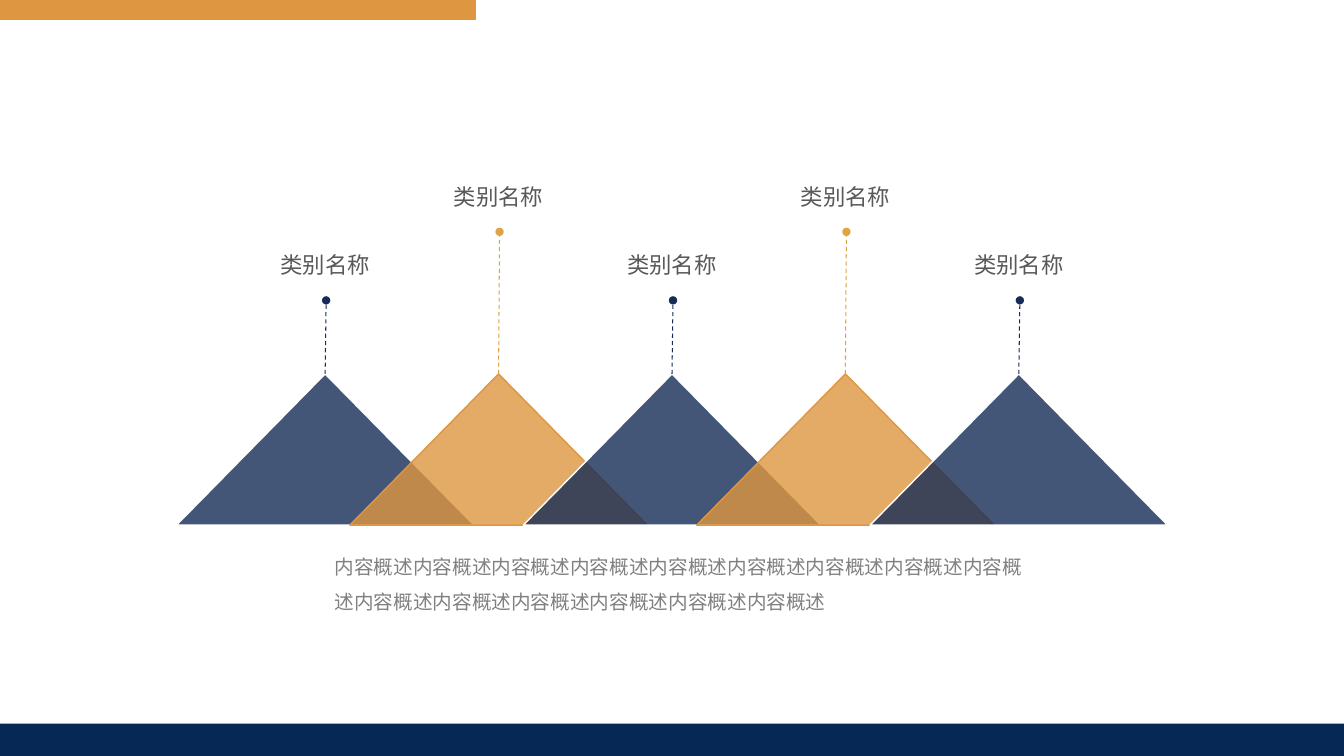
import pptx
import pptx.util
import pptx.dml.color
import pptx.enum.dml
import pptx.enum.shapes
import pptx.enum.text
import pptx.oxml.ns
from lxml import etree

Inches = pptx.util.Inches
Pt = pptx.util.Pt
RGBColor = pptx.dml.color.RGBColor
SHAPES = pptx.enum.shapes.MSO_SHAPE
ALIGN = pptx.enum.text.PP_ALIGN
qn = pptx.oxml.ns.qn

NAVY = RGBColor(0x16, 0x2C, 0x56)
FOOTER_NAVY = RGBColor(0x06, 0x28, 0x55)
ORANGE = RGBColor(0xDE, 0x96, 0x40)
STEM_ORANGE = RGBColor(0xE0, 0xA2, 0x42)
NEAR_WHITE = RGBColor(0xFE, 0xFF, 0xFF)
LABEL_GREY = RGBColor(0x59, 0x59, 0x59)
BODY_GREY = RGBColor(0x80, 0x80, 0x80)
FONT = "Noto Sans CJK SC"

SLIDE_W, SLIDE_H = 13.33, 7.5
PEAK_W, PEAK_H, PEAK_STEP = 2.95, 1.5, 1.72
LABEL_W, LABEL_H = 2.48, 0.56


def add_filled(slide, kind, box, fill, outline=None, opacity=None):
    shape = slide.shapes.add_shape(kind, *map(Inches, box))
    shape.shadow.inherit = False
    shape.fill.solid()
    shape.fill.fore_color.rgb = fill
    if opacity is not None:
        color = shape.fill._xPr.find(".//" + qn("a:srgbClr"))
        etree.SubElement(color, qn("a:alpha"), val=str(opacity * 1000))
    if outline is None:
        shape.line.fill.background()
    else:
        shape.line.color.rgb = outline
        shape.line.width = Pt(1)
    return shape


def add_text(slide, box, text, size, color, align=ALIGN.LEFT, margins=(0.1, 0.05), grow=False):
    frame = slide.shapes.add_textbox(*map(Inches, box)).text_frame
    frame.word_wrap = True
    frame.margin_left = frame.margin_right = Inches(margins[0])
    frame.margin_top = frame.margin_bottom = Inches(margins[1])
    if grow:
        frame.auto_size = pptx.enum.text.MSO_AUTO_SIZE.SHAPE_TO_FIT_TEXT
    paragraph = frame.paragraphs[0]
    paragraph.alignment = align
    paragraph.line_spacing = 1.5
    run = paragraph.add_run()
    run.text = text
    run.font.size = Pt(size)
    run.font.name = FONT
    run.font.color.rgb = color
    etree.SubElement(run.font._element, qn("a:ea"), typeface=FONT)


def add_stem(slide, start, end, color):
    """Dashed line that ends in a dot."""
    stem = slide.shapes.add_connector(
        pptx.enum.shapes.MSO_CONNECTOR.STRAIGHT, *map(Inches, start + end))
    stem.line.color.rgb = color
    stem.line.width = Pt(0.75)
    stem.line.dash_style = pptx.enum.dml.MSO_LINE.DASH
    etree.SubElement(stem.line._get_or_add_ln(), qn("a:tailEnd"), type="oval")
    etree.SubElement(stem._element.spPr, qn("a:effectLst"))


def add_peak(slide, left, top, label, tall):
    """One triangle with its stem and label, placed from the triangle's corner."""
    fill, outline, stem_color = (
        (ORANGE, ORANGE, STEM_ORANGE) if tall else (NAVY, NEAR_WHITE, NAVY))
    stem_h, label_rise = (1.41, 2.09) if tall else (0.73, 1.41)
    apex = left + PEAK_W / 2
    add_filled(slide, SHAPES.ISOSCELES_TRIANGLE, (left, top, PEAK_W, PEAK_H),
               fill, outline, opacity=80)
    add_stem(slide, (apex, top), (apex + 0.01, top - stem_h), stem_color)
    add_text(slide, (apex - LABEL_W / 2, top - label_rise, LABEL_W, LABEL_H), label,
             16, LABEL_GREY, align=ALIGN.CENTER, margins=(0.12, 0.06))


def add_peak_row(slide, left, top, labels):
    for index, label in enumerate(labels):
        add_peak(slide, left + index * PEAK_STEP, top, label, tall=index % 2 == 1)


def add_bars(slide, width, height):
    add_filled(slide, SHAPES.RECTANGLE, (0, 0, width * 0.354, 0.19), ORANGE, ORANGE)
    add_filled(slide, SHAPES.RECTANGLE, (0, height - 0.32, width, 0.32), FOOTER_NAVY)


def main():
    deck = pptx.Presentation()
    deck.slide_width, deck.slide_height = Inches(SLIDE_W), Inches(SLIDE_H)
    slide = deck.slides.add_slide(deck.slide_layouts[6])

    # Row of overlapping peaks
    add_peak_row(slide, 1.75, 3.71, ["类别名称"] * 5)
    # Top and bottom bars
    add_bars(slide, SLIDE_W, SLIDE_H)
    # Summary below the peaks
    add_text(slide, (3.22, 5.34, 7.19, 1.08), "内容概述" * 15, 14, BODY_GREY, grow=True)

    deck.save("out.pptx")


if __name__ == "__main__":
    main()
